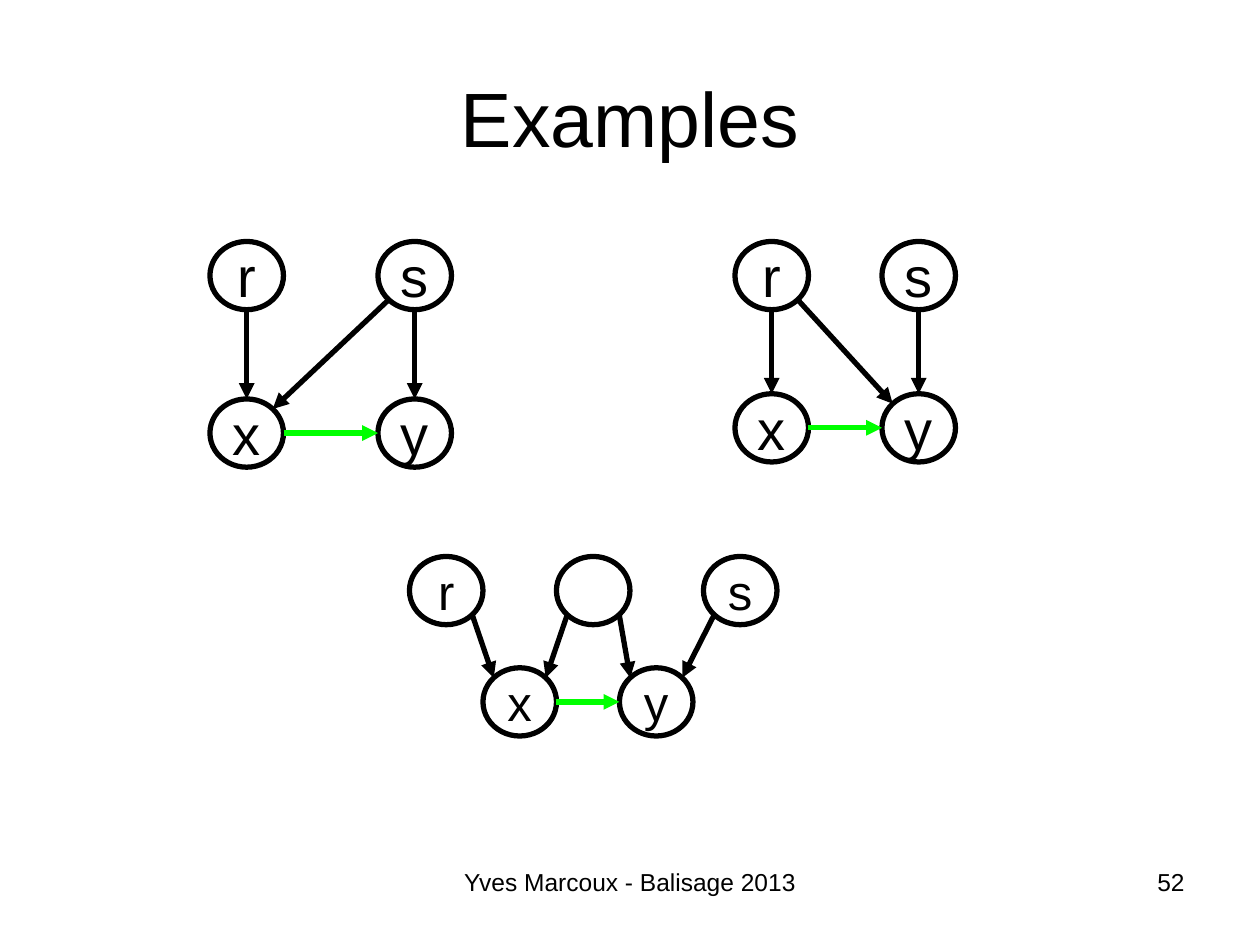
from math import sqrt

from pptx import Presentation
from pptx.dml.color import RGBColor
from pptx.enum.shapes import MSO_CONNECTOR, MSO_SHAPE
from pptx.enum.text import MSO_ANCHOR, PP_ALIGN
from pptx.oxml.ns import qn
from pptx.util import Inches, Pt

BLACK = RGBColor(0x00, 0x00, 0x00)
GREEN = RGBColor(0x00, 0xFF, 0x00)
CENTER, RIGHT = PP_ALIGN.CENTER, PP_ALIGN.RIGHT
TOP, MIDDLE = MSO_ANCHOR.TOP, MSO_ANCHOR.MIDDLE
OVAL, STRAIGHT = MSO_SHAPE.OVAL, MSO_CONNECTOR.STRAIGHT

CELL = Inches(1 / 12)  # the slide is a grid of 120 columns by 90 rows
NODE_WIDTH, NODE_HEIGHT = 7, 6.5
DIAGONAL = 1 / sqrt(2)
RIM = {
    "top": (0, -1), "bottom": (0, 1), "left": (-1, 0), "right": (1, 0),
    "top left": (-DIAGONAL, -DIAGONAL), "top right": (DIAGONAL, -DIAGONAL),
    "bottom left": (-DIAGONAL, DIAGONAL), "bottom right": (DIAGONAL, DIAGONAL),
}

# Each graph: text size, nodes (key: label, column, row), black arrows.
GRAPHS = [
    (32,
     {"r": ("r", 20, 23), "s": ("s", 36, 23), "x": ("x", 20, 38), "y": ("y", 36, 38)},
     [("r", "bottom", "x", "top"), ("s", "bottom left", "x", "top right"),
      ("s", "bottom", "y", "top")]),
    (32,
     {"r": ("r", 70, 23), "s": ("s", 84, 23), "x": ("x", 70, 37.5), "y": ("y", 84, 37.5)},
     [("r", "bottom", "x", "top"), ("r", "bottom right", "y", "top left"),
      ("s", "bottom", "y", "top")]),
    (28,
     {"r": ("r", 39, 53), "shared": ("", 53, 53), "s": ("s", 67, 53),
      "x": ("x", 46, 63.6), "y": ("y", 59, 63.6)},
     [("r", "bottom right", "x", "top left"),
      ("shared", "bottom left", "x", "top right"),
      ("shared", "bottom right", "y", "top left"),
      ("s", "bottom left", "y", "top right")]),
]


def cells(*counts):
    return [round(count * CELL) for count in counts]


def rim_point(node, side):
    """Return the column and row where an arrow meets the node's outline."""
    _, column, row = node
    across, down = RIM[side]
    return (column + NODE_WIDTH / 2 * (1 + across),
            row + NODE_HEIGHT / 2 * (1 + down))


class GraphSlide:
    font_name = "Arial"
    line_width = Pt(3)

    def __init__(self, slide):
        self.slide = slide

    def set_text(self, shape, text, size, alignment=CENTER, anchor=MIDDLE, wrap=True):
        frame = shape.text_frame
        frame.word_wrap = wrap
        frame.vertical_anchor = anchor
        paragraph = frame.paragraphs[0]
        paragraph.alignment = alignment
        run = paragraph.add_run()
        run.text = text
        run.font.color.rgb = BLACK
        for name, value in {"name": self.font_name, "size": Pt(size)}.items():
            setattr(run.font, name, value)

    def text_box(self, text, box, size, **layout):
        self.set_text(self.slide.shapes.add_textbox(*cells(*box)), text, size, **layout)

    def node(self, label, column, row, size):
        shape = self.slide.shapes.add_shape(
            OVAL, *cells(column, row, NODE_WIDTH, NODE_HEIGHT))
        shape.shadow.inherit = False
        shape.fill.background()
        shape.line.color.rgb = BLACK
        shape.line.width = self.line_width
        if label:
            self.set_text(shape, label, size, wrap=False)

    def arrow(self, start, end, color=BLACK):
        connector = self.slide.shapes.add_connector(STRAIGHT, *cells(*start, *end))
        connector.line.color.rgb = color
        connector.line.width = self.line_width
        properties = connector._element.spPr
        line = properties.find(qn("a:ln"))
        line.append(line.makeelement(qn("a:tailEnd"), {"type": "triangle"}))
        properties.append(properties.makeelement(qn("a:effectLst"), {}))

    def graph(self, size, nodes, arrows):
        for node in nodes.values():
            self.node(*node, size)
        for source, source_side, target, target_side in arrows:
            self.arrow(rim_point(nodes[source], source_side),
                       rim_point(nodes[target], target_side))
        self.arrow(rim_point(nodes["x"], "right"),
                   rim_point(nodes["y"], "left"), GREEN)


def main():
    presentation = Presentation()
    presentation.slide_width, presentation.slide_height = cells(120, 90)
    page = GraphSlide(presentation.slides.add_slide(presentation.slide_layouts[6]))
    page.text_box("Examples", (6, 3.6, 108, 15), 44)
    page.text_box("Yves Marcoux - Balisage 2013", (28, 82, 64, 6.25), 14, anchor=TOP)
    page.text_box("52", (86, 82, 28, 6.25), 14, alignment=RIGHT, anchor=TOP)
    for graph in GRAPHS:
        page.graph(*graph)
    presentation.save("out.pptx")


if __name__ == "__main__":
    main()
